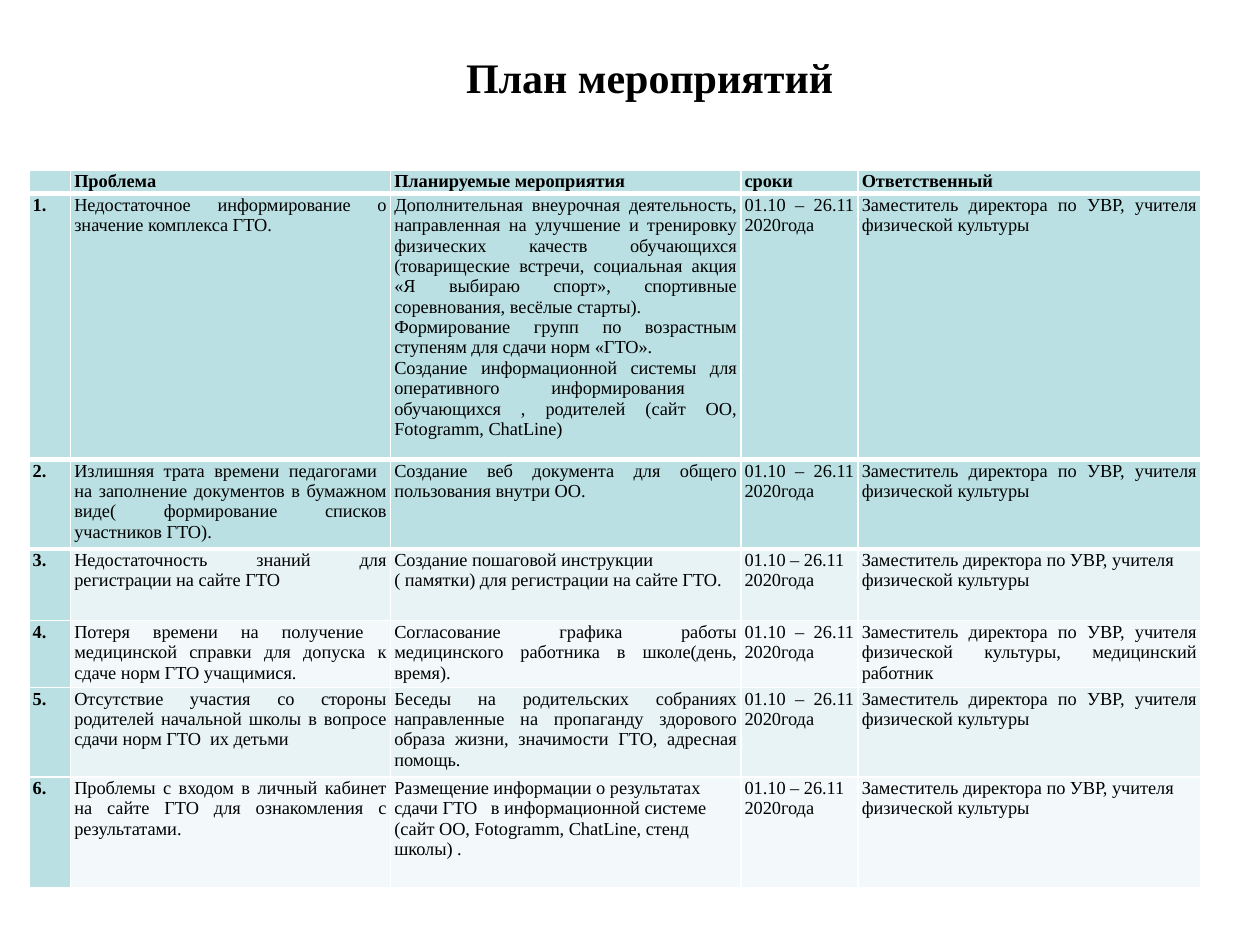
from lxml.etree import SubElement
from pptx import Presentation
from pptx.dml.color import RGBColor
from pptx.enum.text import MSO_ANCHOR, PP_ALIGN as Align
from pptx.oxml.ns import qn
from pptx.util import Inches, Pt

COLORS = {"text": "000000", "line": "FFFFFF", "accent": "BBE0E3",
          "band": "E7F3F4", "pale": "F3F9FA"}
FONT = "Times New Roman"
BODY_SIZE = 10.5
THIN, THICK = 1, 3

COLUMNS = [0.33, 2.54, 2.78, 0.93, 2.72]
ROWS = [0.18, 2.11, 0.71, 0.57, 0.53, 0.71, 0.88]
ROW_FILLS = ["accent", "accent", "accent", "band", "pale", "band", "pale"]
THICK_EDGES = {1, 2, 3}     # row boundaries drawn with the heavy line
LEFT_ROWS = {3, 6}          # rows whose last three columns are not justified

HEADINGS = ["", "Проблема", "Планируемые мероприятия", "сроки", "Ответственный"]
DATES = "01.10 – 26.11 2020года"
STAFF = "Заместитель директора по УВР, учителя физической культуры"
PLAN = [
    ("Недостаточное информирование о значение комплекса ГТО.",
     "Дополнительная внеурочная деятельность, направленная на улучшение и "
     "тренировку физических качеств обучающихся (товарищеские встречи, "
     "социальная акция «Я выбираю спорт», спортивные соревнования, весёлые старты).\n"
     "Формирование групп по возрастным ступеням для сдачи норм «ГТО».\n"
     "Создание информационной системы для оперативного информирования  "
     "обучающихся , родителей (сайт ОО, Fotogramm, ChatLine)", STAFF),
    ("Излишняя трата времени педагогами  на заполнение документов в бумажном "
     "виде( формирование списков участников ГТО).",
     "Создание веб документа для общего пользования внутри ОО.", STAFF),
    ("Недостаточность знаний для регистрации на сайте ГТО",
     "Создание пошаговой инструкции ( памятки) для регистрации на сайте ГТО.", STAFF),
    ("Потеря времени на получение  медицинской справки для допуска к сдаче "
     "норм ГТО учащимися.",
     "Согласование графика работы медицинского работника в школе(день, время).",
     STAFF + ", медицинский работник"),
    ("Отсутствие участия со стороны родителей начальной школы в вопросе сдачи "
     "норм ГТО  их детьми",
     "Беседы на родительских собраниях направленные на пропаганду здорового "
     "образа жизни, значимости ГТО, адресная помощь.", STAFF),
    ("Проблемы с входом в личный кабинет на сайте ГТО для ознакомления с результатами.",
     "Размещение информации о результатах сдачи ГТО   в информационной системе  "
     "(сайт ОО, Fotogramm, ChatLine, стенд школы) .", STAFF),
]


def set_values(target, values):
    for name, value in values.items():
        setattr(target, name, value)


def format_text(frame, size, bold, align):
    for paragraph in frame.paragraphs:
        paragraph.alignment = align
        for run in paragraph.runs:
            set_values(run.font, {"name": FONT, "size": Pt(size), "bold": bold})
            run.font.color.rgb = RGBColor.from_string(COLORS["text"])
        if not paragraph.runs:
            paragraph._p.get_or_add_endParaRPr().set("sz", str(int(size * 100)))


def add_borders(cell, row):
    """White grid lines, heavier on the chosen row boundaries."""
    top, bottom = (THICK if edge in THICK_EDGES else THIN for edge in (row, row + 1))
    properties = cell._tc.get_or_add_tcPr()
    for side, width in {"L": THIN, "R": THIN, "T": top, "B": bottom}.items():
        line = SubElement(properties, qn(f"a:ln{side}"), w=str(Pt(width)))
        fill = SubElement(line, qn("a:solidFill"))
        SubElement(fill, qn("a:srgbClr"), val=COLORS["line"])


def place_title(slide, left, top, width, height):
    title = slide.shapes.title
    set_values(title, {"left": Inches(left), "top": Inches(top),
                       "width": Inches(width), "height": Inches(height)})
    title.text_frame.text = "План мероприятий"
    set_values(title.text_frame, {"word_wrap": True, "vertical_anchor": MSO_ANCHOR.MIDDLE})
    format_text(title.text_frame, 24, True, Align.CENTER)


def place_plan(slide, left, top):
    box = [Inches(v) for v in (left, top, sum(COLUMNS), sum(ROWS))]
    plan = slide.shapes.add_table(len(ROWS), len(COLUMNS), *box).table
    for column, width in zip(plan.columns, COLUMNS):
        column.width = Inches(width)
    for row, height in zip(plan.rows, ROWS):
        row.height = Inches(height)

    contents = [HEADINGS] + [
        [f"{number}.", problem, measures, DATES, staff]
        for number, (problem, measures, staff) in enumerate(PLAN, 1)]
    for r, texts in enumerate(contents):
        for c, text in enumerate(texts):
            cell = plan.cell(r, c)
            set_values(cell, {"margin_left": Inches(0.03), "margin_right": Inches(0.03),
                              "margin_top": Inches(0.01), "margin_bottom": 0})
            add_borders(cell, r)
            cell.fill.solid()
            fill = "accent" if c == 0 else ROW_FILLS[r]
            cell.fill.fore_color.rgb = RGBColor.from_string(COLORS[fill])
            cell.text_frame.text = text
            align = Align.LEFT if r in LEFT_ROWS and c >= 2 else Align.JUSTIFY
            format_text(cell.text_frame, BODY_SIZE, r == 0 or c == 0, align)


def main():
    deck = Presentation()
    set_values(deck, {"slide_width": Inches(10), "slide_height": Inches(7.5)})
    slide = deck.slides.add_slide(deck.slide_layouts[5])  # title only
    place_title(slide, 3.07, 0.36, 4.17, 0.5)
    place_plan(slide, 0.23, 1.35)
    deck.save("out.pptx")


if __name__ == "__main__":
    main()
